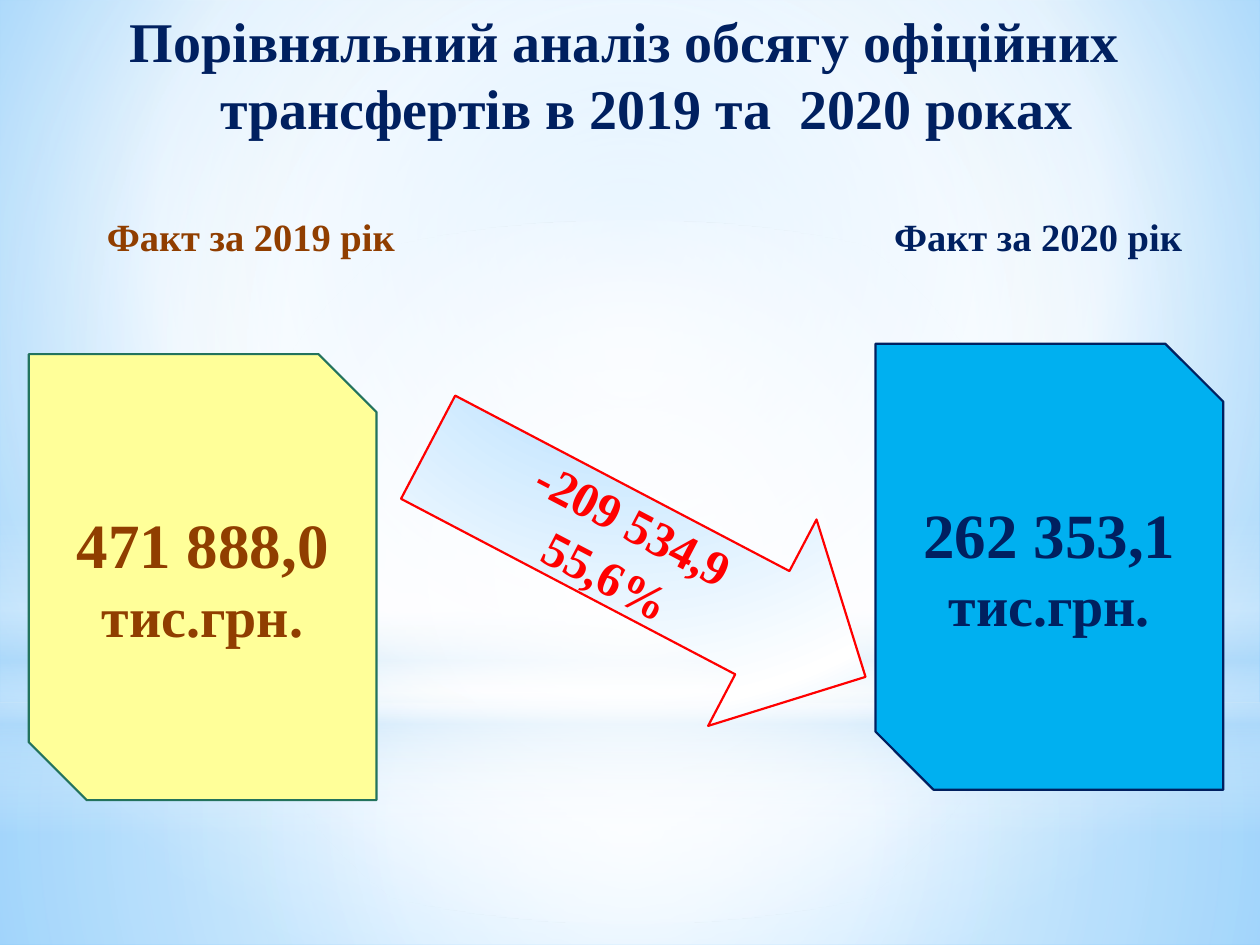
"""Builds a slide comparing the official transfers of 2019 and 2020."""
from pptx import Presentation
from pptx.dml.color import RGBColor
from pptx.enum.shapes import MSO_SHAPE
from pptx.enum.text import MSO_ANCHOR, PP_ALIGN
from pptx.oxml import parse_xml
from pptx.oxml.ns import nsdecls
from pptx.util import Cm, Pt

RECT, OVAL = MSO_SHAPE.RECTANGLE, MSO_SHAPE.OVAL
SNIP, ARROW = MSO_SHAPE.SNIP_2_DIAG_RECTANGLE, MSO_SHAPE.DOWN_ARROW
MID, TOP, CENTER = MSO_ANCHOR.MIDDLE, MSO_ANCHOR.TOP, PP_ALIGN.CENTER
NAVY, BROWN, RED = "002060", "903E00", "FF0000"
WHITE, PALE = "FFFFFF", "B4DCFA"
SKY = [(0, "9ED5FF", 100), (60, WHITE, 100), (100, "5BB9FF", 100)]
SKY_BOX, MID_BOX = (20, 10, 20, 60), (50, 50, 50, 50)


def put(para, text, size=32, color=NAVY, bold=True, name="Times New Roman"):
    run = para.add_run()
    run.text = text
    font = run.font
    font.size, font.bold, font.name = Pt(size), bold, name
    font.color.rgb = RGBColor.from_string(color)


def shade(fill, root, stops, box=None):
    fill.gradient()
    old = root.xpath(".//a:gradFill")[0]
    marks = "".join(
        f'<a:gs pos="{pos * 1000}"><a:srgbClr val="{color}">'
        f'<a:alpha val="{alpha * 1000}"/></a:srgbClr></a:gs>'
        for pos, color, alpha in stops)
    kind = '<a:lin ang="5400000" scaled="0"/>'
    if box:
        sides = " ".join(f'{k}="{v * 1000}"' for k, v in zip("ltrb", box))
        kind = f'<a:path path="circle"><a:fillToRect {sides}/></a:path>'
    old.getparent().replace(old, parse_xml(
        f'<a:gradFill {nsdecls("a")} rotWithShape="1">'
        f'<a:gsLst>{marks}</a:gsLst>{kind}</a:gradFill>'))


deck = Presentation()
deck.slide_width, deck.slide_height = Cm(25.4), Cm(19.05)
slide = deck.slides.add_slide(deck.slide_layouts[3])
shapes = slide.shapes
shade(slide.background.fill, slide._element, SKY, SKY_BOX)

layers = [
    (RECT, 14.17, 4.88, [(0, WHITE, 91), (37, WHITE, 76), (100, PALE, 79)], MID_BOX),
    (RECT, 0, 14.17, [(0, WHITE, 89), (48, WHITE, 62), (100, PALE, 79)], MID_BOX),
    (RECT, 10.46, 6.35, [(0, WHITE, 0), (29, WHITE, 30), (45, PALE, 40),
                         (55, WHITE, 26), (65, PALE, 60), (100, WHITE, 0)], None),
    (OVAL, 4.45, 14.17, [(0, WHITE, 100), (56, WHITE, 0)], MID_BOX),
]
for form, top, high, stops, box in layers:
    layer = shapes.add_shape(form, 0, Cm(top), deck.slide_width, Cm(high))
    layer.shadow.inherit = False
    layer.line.fill.background()
    shade(layer.fill, layer._element, stops, box)

title, first, last = slide.placeholders
frames = [
    (title, 0.58, 0, 24.03, 3.18, MID),
    (first, 1.9, 4.17, 6.7, 1.5, TOP),
    (last, 17.77, 4.17, 6.7, 1.5, TOP),
]
for holder, left, top, wide, high, anchor in frames:
    holder.left, holder.top = Cm(left), Cm(top)
    holder.width, holder.height = Cm(wide), Cm(high)
    holder.text_frame.vertical_anchor = anchor
    shapes._spTree.append(holder._element)

title.text_frame.margin_bottom = Cm(0.33)
head = title.text_frame.paragraphs[0]
head.alignment = CENTER
props = head._p.get_or_add_pPr()
props.set("marL", str(Cm(0.89)))
props.set("indent", str(Cm(-0.89)))
put(head, "Порівняльний аналіз обсягу офіційних трансфертів в 2019 та  2020 роках")

for holder, text, ink in ((first, "Факт за 2019 рік", BROWN),
                          (last, "Факт за 2020 рік", NAVY)):
    para = holder.text_frame.paragraphs[0]
    props = para._p.get_or_add_pPr()
    props.set("marL", "0")
    props.set("indent", "0")
    props.append(parse_xml(f'<a:buNone {nsdecls("a")}/>'))
    put(para, text, size=22, color=ink)

cards = [
    (0.58, 7.14, "FFFF99", "23735D", BROWN, "471 888,0 "),
    (17.65, 6.93, "00B0F0", NAVY, NAVY, "262 353,1 "),
]
for left, top, fill, edge, ink, total in cards:
    card = shapes.add_shape(SNIP, Cm(left), Cm(top), Cm(7.01), Cm(8.99))
    card.shadow.inherit = False
    card.fill.solid()
    card.fill.fore_color.rgb = RGBColor.from_string(fill)
    card.line.color.rgb = RGBColor.from_string(edge)
    card.line.width = Pt(1.25)
    para = card.text_frame.paragraphs[0]
    para.alignment = CENTER
    put(para, total, size=36, color=ink)
    put(para, "тис.грн.", color=ink)

arrow = shapes.add_shape(ARROW, Cm(10.69), Cm(6.35), Cm(4.7), Cm(9.96))
arrow.rotation = 297.7
arrow.shadow.inherit = False
arrow._element.set("useBgFill", "1")
arrow.line.color.rgb = RGBColor.from_string(RED)
arrow.line.width = Pt(1.25)
frame = arrow.text_frame
frame._txBody.bodyPr.set("vert", "vert")
frame.vertical_anchor = MID
for para, text in zip((frame.paragraphs[0], frame.add_paragraph()),
                      ("-209 534,9", "55,6%")):
    para.alignment = CENTER
    put(para, text, size=28, color=RED)

deck.save("out.pptx")
